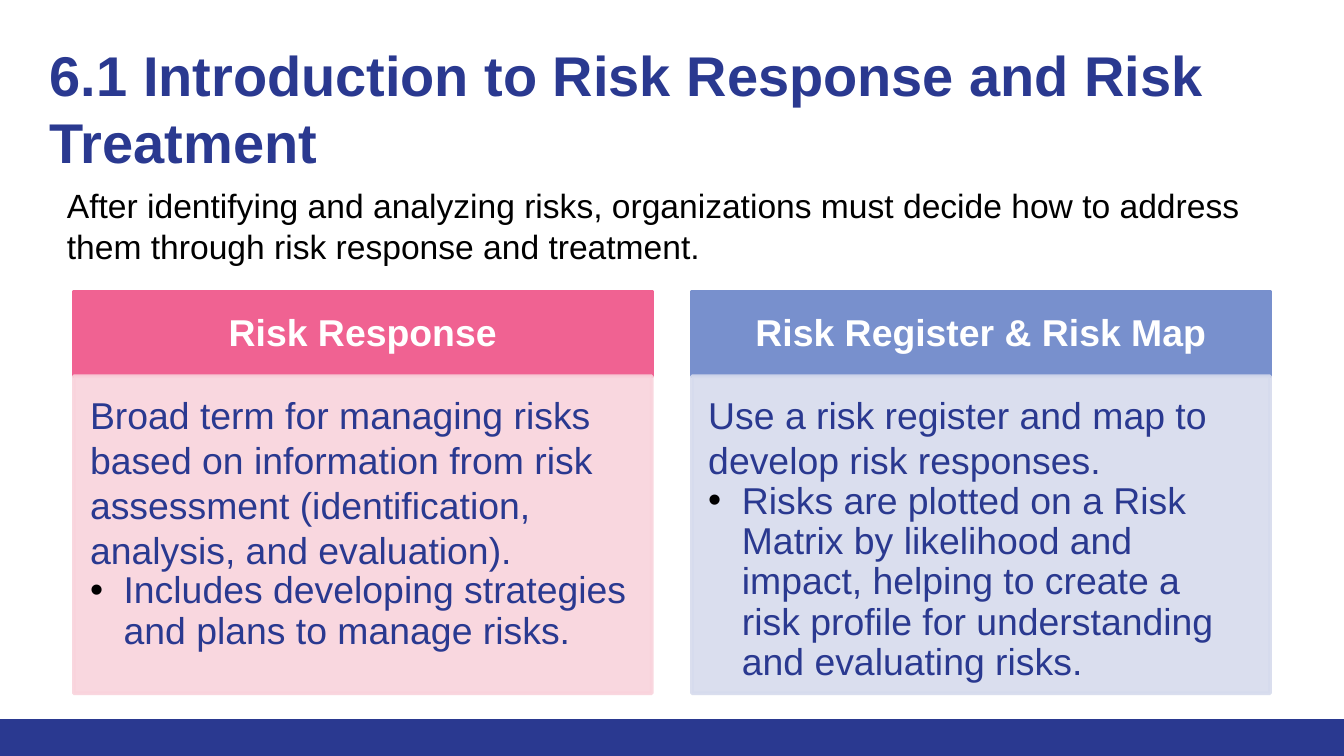
from lxml import etree
from pptx import Presentation
from pptx.dml.color import RGBColor
from pptx.enum.shapes import MSO_SHAPE
from pptx.enum.text import MSO_ANCHOR, PP_ALIGN
from pptx.oxml.ns import qn
from pptx.util import Inches, Pt

RECT = MSO_SHAPE.RECTANGLE
TOP, MID = MSO_ANCHOR.TOP, MSO_ANCHOR.MIDDLE
LEFT, CENTER = PP_ALIGN.LEFT, PP_ALIGN.CENTER

NAVY, WHITE, BLACK = "2A3990", "FFFFFF", "000000"
TITLE = "6.1 Introduction to Risk Response and Risk Treatment"
INTRO = ("After identifying and analyzing risks, organizations must decide "
         "how to address them through risk response and treatment.")
CARDS = [
    {"head": "Risk Response", "dark": "F06292", "light": "F9D3DC",
     "lead": "Broad term for managing risks based on information from risk "
             "assessment (identification, analysis, and evaluation).",
     "item": "Includes developing strategies and plans to manage risks."},
    {"head": "Risk Register & Risk Map", "dark": "7890CD", "light": "D6DBED",
     "lead": "Use a risk register and map to develop risk responses.",
     "item": "Risks are plotted on a Risk Matrix by likelihood and impact, "
             "helping to create a risk profile for understanding and "
             "evaluating risks."},
]
X, Y, WIDE, GAP = 0.55, 2.17, 4.3, 0.3
HEAD, BODY = 0.63, 2.36


def rgb(code):
    return RGBColor.from_string(code)


def style(para, size, color, bold=False, align=LEFT, space=1.0):
    para.alignment = align
    para.line_spacing = space
    para.space_before = para.space_after = Pt(0)
    for run in para.runs:
        font = run.font
        font.name, font.size, font.bold = "Arial", Pt(size), bold
        font.color.rgb = rgb(color)


def setup(frame, pads, anchor=TOP):
    frame.word_wrap = True
    frame.vertical_anchor = anchor
    (frame.margin_left, frame.margin_top,
     frame.margin_right, frame.margin_bottom) = [Inches(p) for p in pads]


def panel(slide, box, color, alpha=100):
    shape = slide.shapes.add_shape(RECT, *[Inches(v) for v in box])
    shape.shadow.inherit = False
    shape.fill.solid()
    shape.fill.fore_color.rgb = rgb(color)
    shape.line.color.rgb = rgb(color)
    shape.line.width = Pt(2)
    if alpha < 100:
        for node in shape.element.spPr.iter(qn("a:srgbClr")):
            etree.SubElement(node, qn("a:alpha"), val=str(alpha * 1000))
    return shape


def bullet(para):
    props = para._p.get_or_add_pPr()
    props.set("marL", str(Inches(0.25)))
    props.set("indent", str(Inches(-0.25)))
    tint = etree.SubElement(props, qn("a:buClr"))
    etree.SubElement(tint, qn("a:srgbClr"), val=BLACK)
    etree.SubElement(props, qn("a:buFont"), typeface="Arial")
    etree.SubElement(props, qn("a:buChar"), char="•")


def card(slide, left, data):
    top = panel(slide, (left, Y, WIDE, HEAD), data["dark"]).text_frame
    setup(top, (0.16, 0.09, 0.16, 0.09), MID)
    top.text = data["head"]
    style(top.paragraphs[0], 20, WHITE, True, CENTER, 0.9)

    box = (left, Y + HEAD, WIDE, BODY)
    body = panel(slide, box, data["light"], 90).text_frame
    setup(body, (0.12, 0.12, 0.16, 0.17))
    body.text = data["lead"]
    style(body.paragraphs[0], 20, NAVY)
    item = body.add_paragraph()
    item.text = data["item"]
    bullet(item)
    style(item, 20, NAVY, space=0.9)


def main():
    deck = Presentation()
    deck.slide_width, deck.slide_height = Inches(10), Inches(5.625)
    slide = deck.slides.add_slide(deck.slide_layouts[5])

    bar = panel(slide, (0, 5.35, 10, 0.28), NAVY)
    bar.line.fill.background()

    title = slide.shapes.title
    title.left, title.top = Inches(0.27), Inches(0.2)
    title.width, title.height = Inches(9.2), Inches(0.89)
    setup(title.text_frame, (0.1, 0.1, 0.1, 0.1))
    title.text_frame.text = TITLE
    style(title.text_frame.paragraphs[0], 30, NAVY, True)

    for i, data in enumerate(CARDS):
        card(slide, X + i * (WIDE + GAP), data)

    box = [Inches(v) for v in (0.4, 1.33, 9.2, 0.71)]
    intro = slide.shapes.add_textbox(*box).text_frame
    setup(intro, (0.1, 0.05, 0.1, 0.05))
    intro.text = INTRO
    style(intro.paragraphs[0], 18, BLACK)

    deck.save("out.pptx")


if __name__ == "__main__":
    main()
